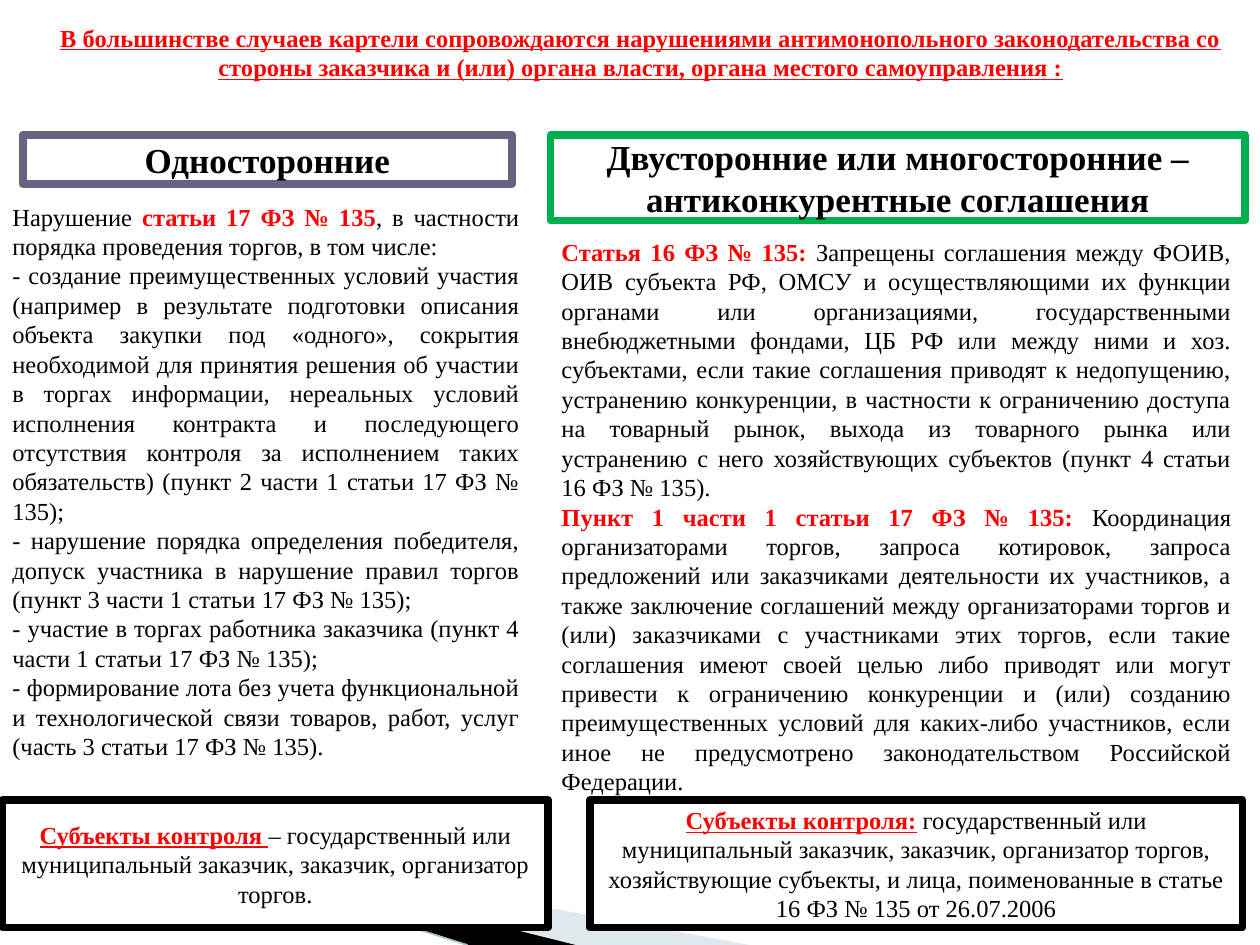
import pptx
import pptx.util
import pptx.dml.color
import pptx.enum.shapes
import pptx.enum.text
import pptx.oxml
import pptx.oxml.ns

Cm = pptx.util.Cm
Pt = pptx.util.Pt
RGB = pptx.dml.color.RGBColor
ALIGN = pptx.enum.text.PP_ALIGN
ANCHOR = pptx.enum.text.MSO_ANCHOR
NS = pptx.oxml.ns.nsdecls("a")

RED = RGB(0xFF, 0x00, 0x00)
BLACK = RGB(0x00, 0x00, 0x00)
WHITE = RGB(0xFF, 0xFF, 0xFF)
GREEN = RGB(0x00, 0xB0, 0x50)
SLATE = RGB(0x67, 0x62, 0x7F)
MIST = RGB(0xB1, 0xC9, 0xD2)
STEEL = RGB(0xAA, 0xC4, 0xCE)

UNARY = [
    [("Нарушение ", False), ("статьи 17 ФЗ № 135", True),
     (", в частности порядка проведения торгов, в том числе:", False)],
    [("- создание преимущественных условий участия (например в результате "
      "подготовки описания объекта закупки под «одного», сокрытия необходимой "
      "для принятия решения об участии в торгах информации, нереальных условий "
      "исполнения контракта и последующего отсутствия контроля за исполнением "
      "таких обязательств) (пункт 2 части 1 статьи 17 ФЗ № 135);", False)],
    [("- нарушение порядка определения победителя, допуск участника в нарушение "
      "правил торгов (пункт 3 части 1 статьи 17 ФЗ № 135);", False)],
    [("- участие в торгах работника заказчика (пункт 4 части 1 статьи 17 "
      "ФЗ № 135);", False)],
    [("- формирование лота без учета функциональной и технологической связи "
      "товаров, работ, услуг (часть 3 статьи 17 ФЗ № 135).", False)],
]

MUTUAL = [
    [("Статья 16 ФЗ № 135: ", True),
     ("Запрещены соглашения между ФОИВ, ОИВ субъекта РФ, ОМСУ и осуществляющими "
      "их функции органами или организациями, государственными внебюджетными "
      "фондами, ЦБ РФ или между ними и хоз. субъектами, если такие соглашения "
      "приводят к недопущению, устранению конкуренции, в частности к ограничению "
      "доступа на товарный рынок, выхода из товарного рынка или устранению с него "
      "хозяйствующих субъектов (пункт 4 статьи 16 ФЗ № 135).", False)],
    [("Пункт 1 части 1 статьи 17 ФЗ № 135: ", True),
     ("Координация организаторами торгов, запроса котировок, запроса предложений "
      "или заказчиками деятельности их участников, а также заключение соглашений "
      "между организаторами торгов и (или) заказчиками с участниками этих торгов, "
      "если такие соглашения имеют своей целью либо приводят или могут привести к "
      "ограничению конкуренции и (или) созданию преимущественных условий для "
      "каких-либо участников, если иное не предусмотрено законодательством "
      "Российской Федерации.", False)],
]


def write(frame, paras, size=14, align=ALIGN.JUSTIFY, bold=False, line=False):
    frame.word_wrap = True
    for i, runs in enumerate(paras):
        para = frame.paragraphs[0] if i == 0 else frame.add_paragraph()
        para.alignment = align
        for text, key in runs:
            run = para.add_run()
            run.text = text
            font = run.font
            font.name = "Times New Roman"
            font.size = Pt(size)
            font.bold = bold or key
            font.underline = line and key
            font.color.rgb = RED if key else BLACK


def add_text(slide, box, paras, **form):
    shape = slide.shapes.add_textbox(*map(Cm, box))
    write(shape.text_frame, paras, **form)


def add_frame(slide, box, edge, runs, **form):
    kind = pptx.enum.shapes.MSO_SHAPE.RECTANGLE
    shape = slide.shapes.add_shape(kind, *map(Cm, box))
    shape.shadow.inherit = False
    shape.fill.solid()
    shape.fill.fore_color.rgb = WHITE
    shape.line.color.rgb = edge
    shape.line.width = Pt(4.33)
    shape.text_frame.vertical_anchor = ANCHOR.MIDDLE
    write(shape.text_frame, [runs], align=ALIGN.CENTER, **form)


def add_wedge(slide, points, color, alpha=100):
    dots = [(Cm(x), Cm(y)) for x, y in points]
    pen = slide.shapes.build_freeform(*dots[0])
    pen.add_line_segments(dots[1:], close=True)
    shape = pen.convert_to_shape()
    shape.shadow.inherit = False
    shape.fill.solid()
    shape.fill.fore_color.rgb = color
    shape.line.fill.background()
    if alpha < 100:
        tint = shape.fill._xPr.find(".//" + pptx.oxml.ns.qn("a:srgbClr"))
        tint.append(pptx.oxml.parse_xml(f'<a:alpha {NS} val="{alpha * 1000}"/>'))


def add_line(slide, start, end, color, width):
    kind = pptx.enum.shapes.MSO_CONNECTOR.STRAIGHT
    line = slide.shapes.add_connector(kind, *map(Cm, start + end))
    line.line.color.rgb = color
    line.line.width = Pt(width)
    line._element.spPr.append(pptx.oxml.parse_xml(f"<a:effectLst {NS}/>"))


def main():
    deck = pptx.Presentation()
    deck.slide_width, deck.slide_height = Cm(25.4), Cm(19.05)
    slide = deck.slides.add_slide(deck.slide_layouts[6])

    add_wedge(slide, [(1.4, 16.52), (15.11, 19.05), (11.58, 19.05)], MIST, 40)
    add_wedge(slide, [(1.35, 16.48), (11.6, 19.05), (9.45, 19.05)], BLACK)
    add_line(slide, (0, 16.08), (9.42, 19.05), STEEL, 0.95)

    add_text(slide, (0.71, 0.33, 24.41, 1.45), [[
        ("В большинстве случаев картели сопровождаются нарушениями "
         "антимонопольного законодательства со стороны заказчика и (или) органа "
         "власти, органа местого самоуправления :", True)]],
        align=ALIGN.CENTER, line=True)

    add_frame(slide, (0.46, 2.72, 9.86, 0.99), SLATE,
              [("Односторонние", False)], size=20, bold=True)
    add_frame(slide, (11.1, 2.72, 14, 1.73), GREEN,
              [("Двусторонние или многосторонние – антиконкурентные соглашения",
                False)], size=20, bold=True)

    add_text(slide, (0, 3.94, 10.72, 11.63), UNARY)
    add_text(slide, (11.07, 4.65, 14, 13.41), MUTUAL)

    add_frame(slide, (0.05, 16.13, 11, 2.57), BLACK, [
        ("Субъекты контроля ", True),
        ("– государственный или муниципальный заказчик, заказчик, организатор "
         "торгов.", False)], line=True)
    add_frame(slide, (11.89, 16.13, 13.16, 2.57), BLACK, [
        ("Субъекты контроля:", True),
        (" государственный или муниципальный заказчик, заказчик, организатор "
         "торгов, хозяйствующие субъекты, и лица, поименованные в статье 16 "
         "ФЗ № 135 от 26.07.2006", False)], line=True)

    deck.save("out.pptx")


if __name__ == "__main__":
    main()
